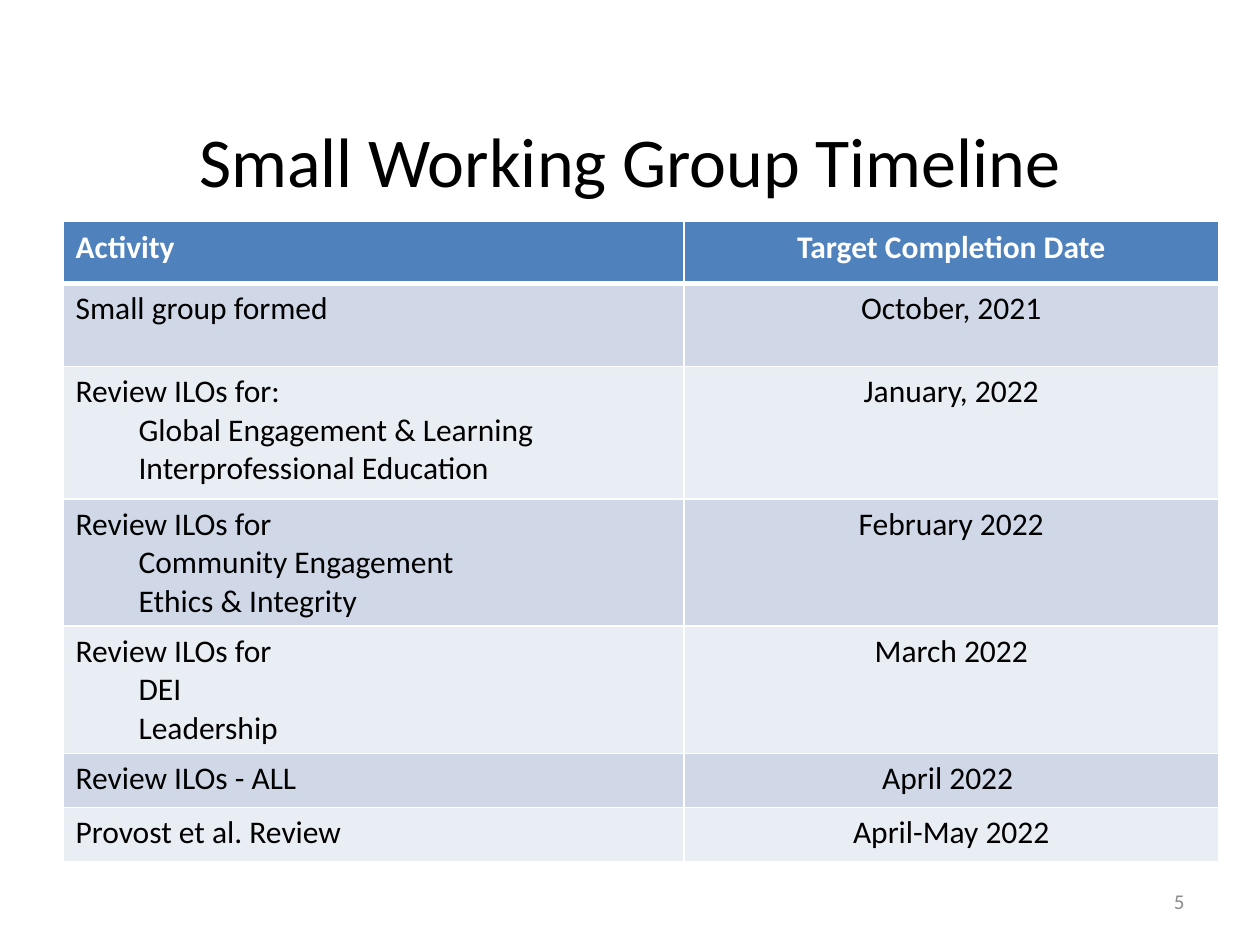
from dataclasses import dataclass

import lxml.etree
import pptx
import pptx.dml.color
import pptx.enum.text
import pptx.oxml.ns
import pptx.util

Inches = pptx.util.Inches
Pt = pptx.util.Pt
RGBColor = pptx.dml.color.RGBColor
ALIGN = pptx.enum.text.PP_ALIGN
ANCHOR = pptx.enum.text.MSO_ANCHOR
qn = pptx.oxml.ns.qn

BLACK = RGBColor(0x00, 0x00, 0x00)
WHITE = RGBColor(0xFF, 0xFF, 0xFF)
GRAY = RGBColor(0x8C, 0x8C, 0x8C)
HEADER_BLUE = RGBColor(0x4F, 0x81, 0xBD)
BAND_DARK = RGBColor(0xD0, 0xD8, 0xE8)
BAND_LIGHT = RGBColor(0xE9, 0xED, 0xF4)

TITLE_FONT = {"name": "Calibri", "size": Pt(40), "bold": False}
NUMBER_FONT = {"name": "Calibri", "size": Pt(12), "bold": False}
HEADER_FONT = {"name": "Calibri", "size": Pt(18), "bold": True}
BODY_FONT = {"name": "Calibri", "size": Pt(18), "bold": False}


@dataclass
class Step:
    activity: str
    date: str
    height: float
    details: tuple[str, ...] = ()


COLUMN_WIDTHS = (4.93, 4.24)
STEPS = (
    Step("Activity", "Target Completion Date", 0.49),
    Step("Small group formed", "October, 2021", 0.66),
    Step("Review ILOs for:", "January, 2022", 1.05,
         ("Global Engagement & Learning", "Interprofessional Education")),
    Step("Review ILOs for", "February 2022", 1.01,
         ("Community Engagement", "Ethics & Integrity")),
    Step("Review ILOs for", "March 2022", 1.01, ("DEI", "Leadership")),
    Step("Review ILOs - ALL", "April 2022 ", 0.43),
    Step("Provost et al. Review", "April-May 2022", 0.43),
)


def write(p, text: str, fmt: dict, color: RGBColor, align: ALIGN) -> None:
    p.alignment = align
    r = p.add_run()
    r.text = text
    for name, value in fmt.items():
        setattr(r.font, name, value)
    r.font.color.rgb = color


def add_text(s, box: tuple, text: str, fmt: dict, color: RGBColor, align: ALIGN) -> None:
    sp = s.shapes.add_textbox(*map(Inches, box))
    tf = sp.text_frame
    tf.word_wrap = True
    tf.vertical_anchor = ANCHOR.MIDDLE
    write(tf.paragraphs[0], text, fmt, color, align)


def style_cell(cell, fill: RGBColor, bottom: float) -> None:
    tc_pr = cell._tc.get_or_add_tcPr()
    for side, width in {"L": 1, "R": 1, "T": 1, "B": bottom}.items():
        ln = lxml.etree.SubElement(tc_pr, qn(f"a:ln{side}"), w=str(Pt(width)))
        solid = lxml.etree.SubElement(ln, qn("a:solidFill"))
        lxml.etree.SubElement(solid, qn("a:srgbClr"), val=str(WHITE))
    cell.fill.solid()
    cell.fill.fore_color.rgb = fill


def add_timeline(s, left: float, top: float) -> None:
    height = sum(step.height for step in STEPS)
    frame = s.shapes.add_table(len(STEPS), len(COLUMN_WIDTHS), Inches(left), Inches(top),
                               Inches(sum(COLUMN_WIDTHS)), Inches(height))
    table = frame.table
    for column, width in zip(table.columns, COLUMN_WIDTHS):
        column.width = Inches(width)
    for i, step in enumerate(STEPS):
        table.rows[i].height = Inches(step.height)
        header = i == 0
        fill = HEADER_BLUE if header else (BAND_LIGHT, BAND_DARK)[i % 2]
        fmt, color = (HEADER_FONT, WHITE) if header else (BODY_FONT, BLACK)
        activity, date = table.cell(i, 0), table.cell(i, 1)
        for cell in (activity, date):
            style_cell(cell, fill, 3 if header else 1)
        tf = activity.text_frame
        write(tf.paragraphs[0], step.activity, fmt, color, ALIGN.LEFT)
        write(date.text_frame.paragraphs[0], step.date, fmt, color, ALIGN.CENTER)
        for detail in step.details:
            p = tf.add_paragraph()
            p.level = 1
            p_pr = p._p.get_or_add_pPr()
            p_pr.set("marL", str(Inches(0.5)))
            p_pr.set("indent", "0")
            write(p, detail, fmt, color, ALIGN.LEFT)


def main() -> None:
    prs = pptx.Presentation()
    prs.slide_width, prs.slide_height = Inches(10), Inches(7.5)
    s = prs.slides.add_slide(prs.slide_layouts[6])
    add_text(s, (0.5, 0.64, 9, 1.25), "Small Working Group Timeline",
             TITLE_FONT, BLACK, ALIGN.CENTER)
    add_text(s, (7.17, 6.95, 2.33, 0.4), "5", NUMBER_FONT, GRAY, ALIGN.RIGHT)
    add_timeline(s, 0.5, 1.76)
    prs.save("out.pptx")


if __name__ == "__main__":
    main()
